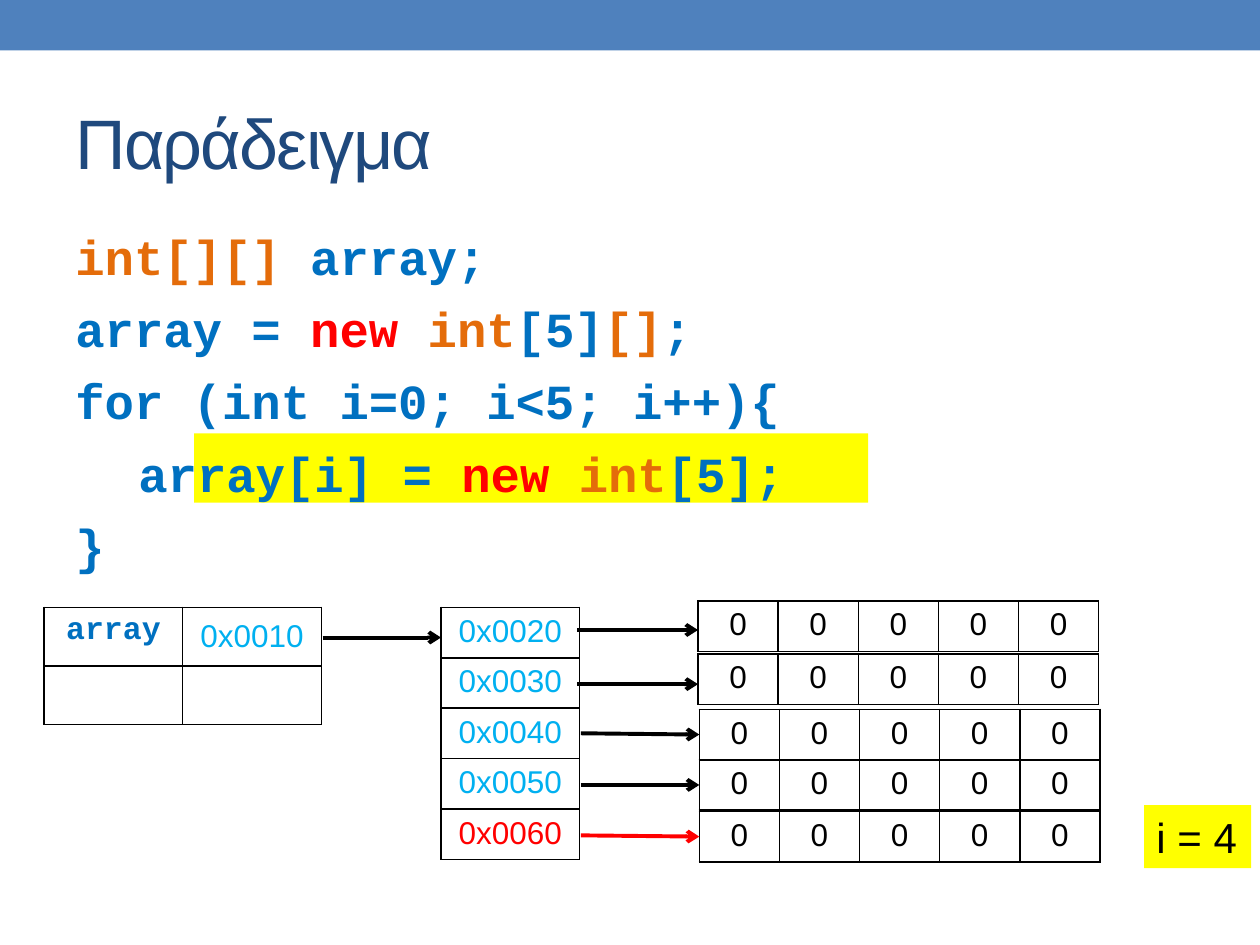
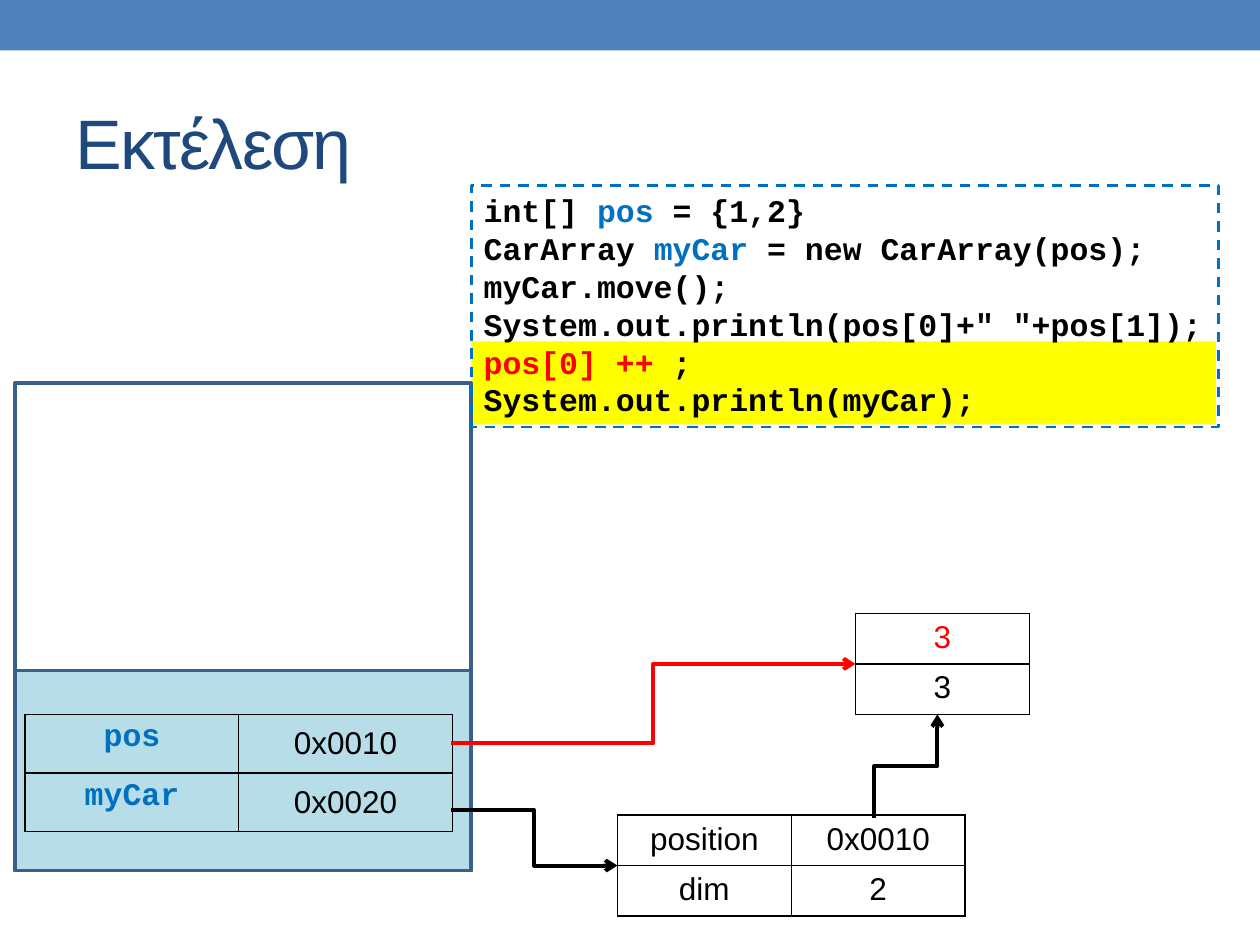
"""Build two slides on Java arrays: references in memory and a run of a program."""
import pptx
import pptx.util
import pptx.dml.color
import pptx.enum.dml
import pptx.enum.shapes
import pptx.enum.text
import pptx.oxml.ns
import lxml.etree

Inches, Pt = pptx.util.Inches, pptx.util.Pt
RGB = pptx.dml.color.RGBColor.from_string
ALIGN, ANCHOR = pptx.enum.text.PP_ALIGN, pptx.enum.text.MSO_ANCHOR
CONN = pptx.enum.shapes.MSO_CONNECTOR
RECT = pptx.enum.shapes.MSO_SHAPE.RECTANGLE
qn = pptx.oxml.ns.qn
C = {"band": "4F81BD", "title": "1F497D", "yellow": "FFFF00", "stack": "B7DEE8",
     "frame": "3A5F8C", "blue": "0070C0", "sky": "00B0F0", "orange": "E46C0A",
     "red": "FF0000", "black": "000000"}
SANS, CODE = "Arial", "Courier New"


def add_text(tf, lines, size=18, font=SANS, bold=False, align=ALIGN.LEFT,
             anchor=ANCHOR.TOP, wrap=True, before=0, spacing=None):
    """Write lines of (text, colour) runs into a text frame."""
    tf.word_wrap = wrap
    tf.vertical_anchor = anchor
    for i, runs in enumerate(lines):
        p = tf.paragraphs[0] if i == 0 else tf.add_paragraph()
        p.alignment = align
        p.space_before = Pt(before)
        for text, color in runs:
            r = p.add_run()
            r.text = text
            r.font.size, r.font.name, r.font.bold = Pt(size), font, bold
            r.font.color.rgb = RGB(C[color])
            if spacing:
                r.font._element.set("spc", str(spacing))


def add_rect(s, box, fill=None, line=None, width=2.08, dash=None):
    """Add a rectangle with optional fill and outline."""
    sp = s.shapes.add_shape(RECT, *map(Inches, box))
    sp.shadow.inherit = False
    if fill:
        sp.fill.solid()
        sp.fill.fore_color.rgb = RGB(C[fill])
    else:
        sp.fill.background()
    if line:
        sp.line.color.rgb = RGB(C[line])
        sp.line.width = Pt(width)
        sp.line.dash_style = dash
    else:
        sp.line.fill.background()
    return sp


array_code = [
    [("int[][] ", "orange"), ("array;", "blue")],
    [("array = ", "blue"), ("new ", "red"), ("int", "orange"), ("[5]", "blue"),
     ("[]", "orange"), (";", "blue")],
    [("for (int i=0; i<5; i++){", "blue")],
    [("\tarray[i] = ", "blue"), ("new ", "red"), ("int", "orange"), ("[5];", "blue")],
    [("}", "blue")],
]
car_code = [
    [("int[] ", "black"), ("pos ", "blue"), ("= {1,2}", "black")],
    [("CarArray ", "black"), ("myCar ", "blue"), ("= new CarArray(pos);", "black")],
    [("myCar.move();", "black")],
    [('System.out.println(pos[0]+" "+pos[1]);', "black")],
    [("pos[0] ++ ", "red"), (";", "black")],
    [("System.out.println(myCar);", "black")],
]

array_tables = [
    (0.35, 4.82, 1.1, 0.465, [[("array", "blue"), ("0x0010", "sky")],
                              [("", "black"), ("", "black")]]),
    (3.5, 4.82, 1.1, 0.38, [[(f"0x00{n}0", "red" if n == 6 else "sky")]
                            for n in range(2, 7)]),
]
array_arrows = [("black", (2.56, 5.06), (3.5, 5.06), 0)]
array_rows = [(5.54, 4.77, 5, 5), (5.54, 5.19, 5.43, 5.43), (5.55, 5.63, 5.82, 5.83),
              (5.55, 6.03, 6.23, 6.23), (5.55, 6.44, 6.63, 6.64)]
for i, (x, y, y1, y2) in enumerate(array_rows):
    last = i == len(array_rows) - 1
    array_tables.append((x, y, 0.636, 0.4 if last else 0.38, [[("0", "black")] * 5]))
    start = 4.58 if i < 2 else 4.61
    array_arrows.append(("red" if last else "black", (start, y1), (x, y2), 0))

car_tables = [
    (0.2, 5.67, 1.695, 0.465, [[("pos", "blue"), ("0x0010", "black")],
                               [("myCar", "blue"), ("0x0020", "black")]]),
    (4.9, 6.47, 1.38, 0.38, [[("position", "black"), ("0x0010", "black")],
                             [("dim", "black"), ("2", "black")]]),
    (6.79, 4.87, 1.38, 0.4, [[("3", "red")], [("3", "black")]]),
]
car_arrows = [
    ("black", (3.58, 6.43), (4.9, 6.87), 0),
    ("black", (7.6, 6.33), (6.78, 5.83), 90),
    ("red", (3.58, 5.9), (6.79, 5.27), 0),
]

prs = pptx.Presentation()
prs.slide_width, prs.slide_height = Inches(10), Inches(7.5)
slides = []
for title in ("Παράδειγμα", "Εκτέλεση"):
    s = prs.slides.add_slide(prs.slide_layouts[6])
    add_rect(s, (0, 0, 10, 0.4), fill="band")
    tb = s.shapes.add_textbox(Inches(0.5), Inches(0.58), Inches(9), Inches(1.08))
    add_text(tb.text_frame, [[(title, "title")]], size=40, anchor=ANCHOR.MIDDLE,
             spacing=-100)
    slides.append(s)
array_slide, car_slide = slides

add_rect(array_slide, (1.54, 3.44, 5.35, 0.55), fill="yellow")
tb = array_slide.shapes.add_textbox(Inches(0.5), Inches(1.75), Inches(9), Inches(5.33))
add_text(tb.text_frame, array_code, size=28, font=CODE, bold=True, before=7.6)
counter = add_rect(array_slide, (9.08, 6.39, 0.85, 0.5), fill="yellow")
add_text(counter.text_frame, [[("i = 4", "black")]], size=24, wrap=False)

add_rect(car_slide, (3.74, 2.71, 5.91, 0.66), fill="yellow")
add_rect(car_slide, (0.12, 5.32, 3.62, 1.59), fill="stack", line="frame")
add_rect(car_slide, (0.12, 3.04, 3.62, 3.87), line="frame")
program = add_rect(car_slide, (3.74, 1.47, 5.93, 1.92), line="blue", width=1.5,
                   dash=pptx.enum.dml.MSO_LINE.DASH)
add_text(program.text_frame, car_code, font=CODE, bold=True, wrap=False)

for s, tables, arrows in ((array_slide, array_tables, array_arrows),
                          (car_slide, car_tables, car_arrows)):
    for x, y, col_w, row_h, rows in tables:
        n_rows, n_cols = len(rows), len(rows[0])
        table = s.shapes.add_table(n_rows, n_cols, Inches(x), Inches(y),
                                   Inches(col_w * n_cols), Inches(row_h * n_rows)).table
        table.first_row = table.horz_banding = False
        for col in table.columns:
            col.width = Inches(col_w)
        for i, row in enumerate(rows):
            table.rows[i].height = Inches(row_h)
            for j, (text, color) in enumerate(row):
                cell = table.cell(i, j)
                tcPr = cell._tc.get_or_add_tcPr()
                for side in ("a:lnL", "a:lnR", "a:lnT", "a:lnB"):
                    ln = lxml.etree.SubElement(tcPr, qn(side), w="12700")
                    fill = lxml.etree.SubElement(ln, qn("a:solidFill"))
                    lxml.etree.SubElement(fill, qn("a:srgbClr"), val=C["black"])
                cell.fill.background()
                is_name = color == "blue"
                add_text(cell.text_frame, [[(text, color)]] if text else [],
                         font=CODE if is_name else SANS, bold=is_name,
                         align=ALIGN.CENTER)
                centred = row_h > 0.4 and not is_name
                cell.vertical_anchor = ANCHOR.MIDDLE if centred else ANCHOR.TOP
    for color, start, end, turn in arrows:
        kind = CONN.STRAIGHT if s is array_slide else CONN.ELBOW
        cx = s.shapes.add_connector(kind, *map(Inches, start + end))
        cx.line.color.rgb = RGB(C[color])
        cx.line.width = Pt(2.25)
        spPr = cx._element.spPr
        lxml.etree.SubElement(spPr.find(qn("a:ln")), qn("a:tailEnd"), type="arrow")
        lxml.etree.SubElement(spPr, qn("a:effectLst"))
        if turn:
            spPr.find(qn("a:xfrm")).set("rot", str(turn * 60000))

prs.save("out.pptx")
